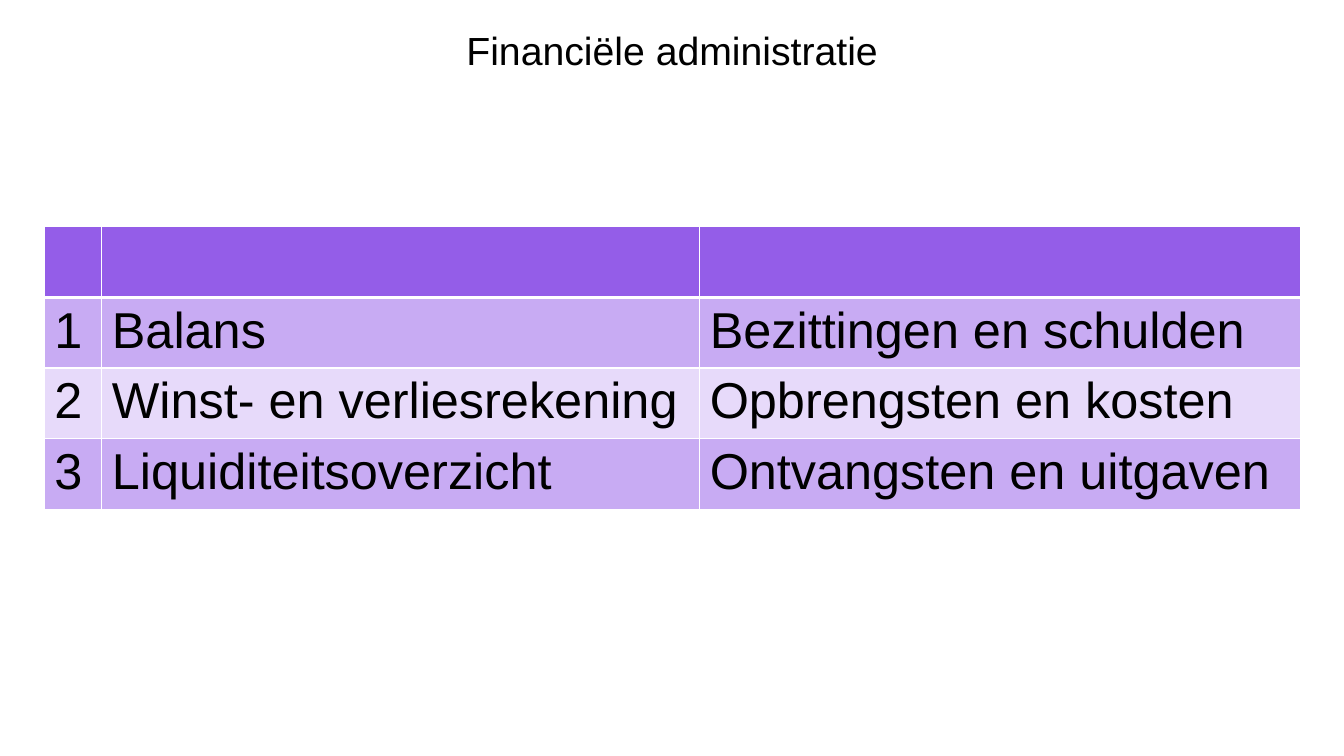
from lxml import etree
from pptx import Presentation
from pptx.dml.color import RGBColor
from pptx.enum.text import MSO_ANCHOR, MSO_AUTO_SIZE, PP_ALIGN
from pptx.oxml.ns import qn
from pptx.util import Inches, Pt

LEFT = PP_ALIGN.LEFT
CENTER = PP_ALIGN.CENTER
TOP = MSO_ANCHOR.TOP
GROW = MSO_AUTO_SIZE.SHAPE_TO_FIT_TEXT

BLACK = RGBColor(0x00, 0x00, 0x00)
WHITE = RGBColor(0xFF, 0xFF, 0xFF)
HEADER_PURPLE = RGBColor(0x94, 0x5D, 0xE8)
BAND_DARK = RGBColor(0xC8, 0xAB, 0xF3)
BAND_LIGHT = RGBColor(0xE7, 0xDA, 0xFA)

FONT = "Arial"
COLUMN_WIDTHS = [0.57, 5.93, 5.96]
STATEMENTS = [
    ("", "", ""),
    ("1", "Balans", "Bezittingen en schulden"),
    ("2", "Winst- en verliesrekening", "Opbrengsten en kosten"),
    ("3", "Liquiditeitsoverzicht", "Ontvangsten en uitgaven"),
]


def write_text(text_frame, text, size, color=BLACK, align=LEFT):
    paragraph = text_frame.paragraphs[0]
    paragraph.alignment = align
    run = paragraph.add_run()
    run.text = text
    run.font.name = FONT
    run.font.size = Pt(size)
    run.font.color.rgb = color


def set_borders(cell, widths, color=WHITE):
    properties = cell._tc.get_or_add_tcPr()
    for side in ("L", "R", "T", "B"):
        line = etree.SubElement(properties, qn(f"a:ln{side}"), w=str(Pt(widths[side])))
        fill = etree.SubElement(line, qn("a:solidFill"))
        etree.SubElement(fill, qn("a:srgbClr"), val=str(color))


def add_title(slide, left, top, width, height):
    shape = slide.shapes.add_textbox(Inches(left), Inches(top), Inches(width), Inches(height))
    text_frame = shape.text_frame
    text_frame.word_wrap = True
    text_frame.auto_size = GROW
    write_text(text_frame, "Financiële administratie", size=28, align=CENTER)


def add_statement_table(slide, left, top, width, height):
    shape = slide.shapes.add_table(
        len(STATEMENTS), len(COLUMN_WIDTHS),
        Inches(left), Inches(top), Inches(width), Inches(height),
    )
    table = shape.table
    for column, share in zip(table.columns, COLUMN_WIDTHS):
        column.width = Inches(width * share / sum(COLUMN_WIDTHS))
    for row_index, texts in enumerate(STATEMENTS):
        table.rows[row_index].height = Inches(height / len(STATEMENTS))
        if row_index == 0:
            fill_color = HEADER_PURPLE
        else:
            fill_color = BAND_DARK if row_index % 2 else BAND_LIGHT
        widths = {
            "L": 1,
            "R": 1,
            "T": 3 if row_index == 1 else 1,
            "B": 3 if row_index == 0 else 1,
        }
        for column_index, text in enumerate(texts):
            cell = table.cell(row_index, column_index)
            cell.vertical_anchor = TOP
            set_borders(cell, widths)
            cell.fill.solid()
            cell.fill.fore_color.rgb = fill_color
            if text:
                write_text(cell.text_frame, text, size=36)


def main():
    presentation = Presentation()
    presentation.slide_width = Inches(13.33)
    presentation.slide_height = Inches(7.5)
    slide = presentation.slides.add_slide(presentation.slide_layouts[6])
    add_title(slide, 2.34, 0.21, 8.65, 0.57)
    add_statement_table(slide, 0.44, 2.25, 12.46, 2.8)
    presentation.save("out.pptx")


if __name__ == "__main__":
    main()
